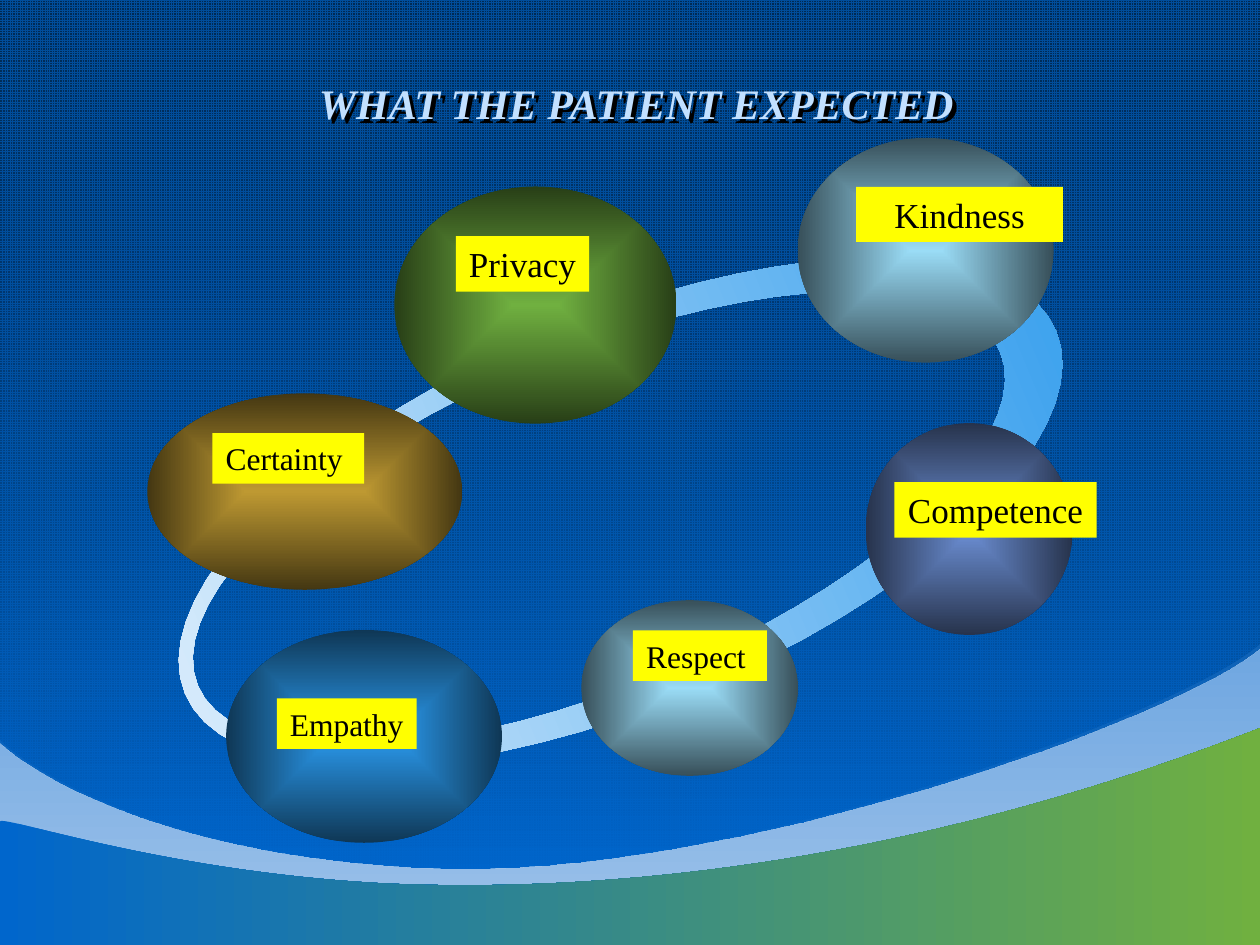
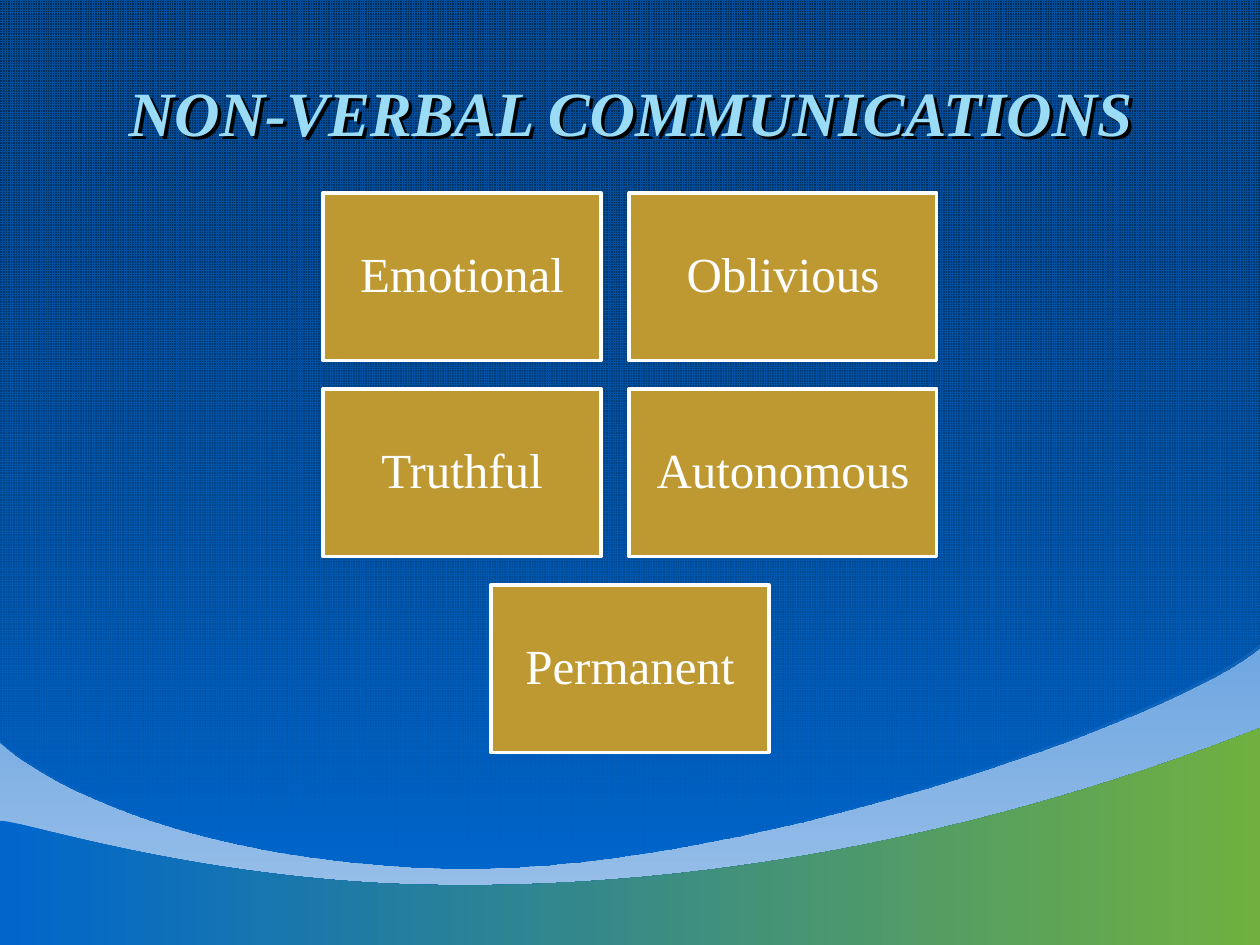
import math

import pptx
import pptx.util
import pptx.dml.color
import pptx.enum.dml
import pptx.enum.shapes
import pptx.enum.text
import pptx.oxml
import pptx.oxml.ns

Cm = pptx.util.Cm
Pt = pptx.util.Pt
SHAPE = pptx.enum.shapes.MSO_SHAPE
ANCHOR = pptx.enum.text.MSO_ANCHOR
qn = pptx.oxml.ns.qn
NAMESPACE = pptx.oxml.ns.nsdecls("a")

WIDTH, HEIGHT = 25.4, 19.05
FONT = "Times New Roman"
COLOURS = {
    "blue": "0066CC", "navy": "002549", "deep": "003162", "mist": "9FC3EA",
    "green": "70B040", "gold": "BE9932", "azure": "2A99EC", "sky": "9ADCF6",
    "violet": "6B8ED3", "ice": "EAF4FD", "pale": "C2E0FF",
    "yellow": "FFFF00", "white": "FFFFFF", "black": "000000",
}

EXPECTED_TITLE = {"text": "WHAT THE PATIENT EXPECTED", "area": (1.4, 1.19, 22.86, 2.41),
                  "size": 24, "colour": "pale", "shadow": 0.12, "lift": 0.66}
NON_VERBAL_TITLE = {"text": "NON-VERBAL COMMUNICATIONS", "area": (1.3, 0.76, 22.83, 2.97),
                    "size": 36, "colour": "sky", "shadow": 0.1, "lift": 0}

EXPECTATIONS = [
    ("Privacy", 20, "green", (7.95, 3.76, 5.69, 4.78), (9.19, 4.76, 2.69, 1.12)),
    ("Certainty ", 18, "gold", (2.97, 7.93, 6.35, 3.96), (4.28, 8.73, 3.06, 1.02)),
    ("Empathy", 18, "azure", (4.56, 12.7, 5.56, 4.29), (5.58, 14.08, 2.82, 1.02)),
    ("Respect ", 18, "sky", (11.72, 12.1, 4.37, 3.54), (12.76, 12.71, 2.7, 1.02)),
    ("Competence", 20, "violet", (17.45, 8.53, 4.18, 4.27), (18.03, 9.72, 4.08, 1.12)),
    ("Kindness", 20, "sky", (16.08, 2.78, 5.16, 4.53), (17.26, 3.77, 4.17, 1.11)),
]
RIM_SHADE = 0.36
RING = {"outer": (12.51, 10.33, 9.51, 3.9), "inner": (12.06, 10.28, 8.76, 3.37), "turn": -22.6}

TRAIT_ROWS = [
    [("Emotional", 5.6), ("Oblivious", 6.2)],
    [("Truthful", 5.6), ("Autonomous", 6.2)],
    [("Permanent", 5.6)],
]
TRAIT_TOP, TRAIT_HEIGHT, TRAIT_GAP = 3.89, 3.38, 0.57

MESH_EDGE = [(0, 14.91), (0.25, 15.21), (2.79, 17.22), (8.69, 17.48),
             (14.6, 17.73), (23.8, 14.4), (WIDTH, 12.98)]
SKY_EDGE = [(0, 14.96), (0.3, 15.27), (2.82, 17.25), (8.74, 17.5),
            (14.63, 17.75), (23.83, 14.45), (WIDTH, 13.05)]
WAVE_EDGE = [(0, 16.56), (0.08, 16.43), (3.3, 17.58), (7.77, 17.81),
             (12.24, 18.01), (18.36, 17.42), (WIDTH, 14.68)]


def rgb(name):
    return pptx.dml.color.RGBColor.from_string(COLOURS[name])


def shaded(name, factor):
    return pptx.dml.color.RGBColor(*(round(part * factor) for part in rgb(name)))


def lengths(area):
    return [Cm(value) for value in area]


def fill_gradient(fill, first, last, angle=0):
    fill.gradient()
    for stop, colour in zip(fill.gradient_stops, (first, last)):
        stop.color.rgb = colour
    fill.gradient_angle = angle


def gradient_element(shape):
    return shape._element.spPr.find(qn("a:gradFill"))


def set_transparent_start(shape, percent):
    colour = next(gradient_element(shape).iter(qn("a:srgbClr")))
    colour.append(pptx.oxml.parse_xml(f'<a:alpha {NAMESPACE} val="{percent * 1000}"/>'))


def make_radial(shape):
    gradient = gradient_element(shape)
    gradient.remove(gradient.find(qn("a:lin")))
    gradient.append(pptx.oxml.parse_xml(
        f'<a:path {NAMESPACE} path="shape">'
        '<a:fillToRect l="50000" t="50000" r="50000" b="50000"/></a:path>'))


def ellipse_points(centre_x, centre_y, radius_x, radius_y, direction, steps=72):
    angles = [direction * 2 * math.pi * step / steps for step in range(steps)]
    return [(centre_x + radius_x * math.cos(a), centre_y + radius_y * math.sin(a))
            for a in angles]


def add_outline(page, *contours):
    contours = [[(Cm(x), Cm(y)) for x, y in contour] for contour in contours]
    builder = page.shapes.build_freeform(*contours[0][0])
    for index, contour in enumerate(contours):
        if index:
            builder.move_to(*contour[0])
        builder.add_line_segments(contour[1:], close=True)
    shape = builder.convert_to_shape()
    shape.shadow.inherit = False
    shape.line.fill.background()
    return shape


def add_wave(page, edge, base):
    shape = add_outline(page, edge + [(WIDTH, base), (0, base)])
    segments = list(shape._element.spPr.iter(qn("a:lnTo")))[:len(edge) - 1]
    for start in range(0, len(segments), 3):
        curve = pptx.oxml.parse_xml(f'<a:cubicBezTo {NAMESPACE}/>')
        segments[start].addprevious(curve)
        for segment in segments[start:start + 3]:
            curve.append(segment[0])
            segment.getparent().remove(segment)
    return shape


def add_preset(page, preset, area):
    shape = page.shapes.add_shape(preset, *lengths(area))
    shape.shadow.inherit = False
    shape.line.fill.background()
    return shape


def write(shape, text, size, colour, strong=False):
    frame = shape.text_frame
    frame.vertical_anchor = ANCHOR.MIDDLE
    para = frame.paragraphs[0]
    para.alignment = pptx.enum.text.PP_ALIGN.CENTER
    span = para.add_run()
    span.text = text
    span.font.name = FONT
    span.font.size = Pt(size)
    span.font.color.rgb = rgb(colour)
    span.font.bold = span.font.italic = strong
    return para


def add_backdrop(layout, page):
    fill_gradient(layout.background.fill, rgb("blue"), rgb("mist"), 270)

    mesh = add_wave(page, MESH_EDGE, 0)
    mesh.fill.patterned()
    mesh.fill.pattern = pptx.enum.dml.MSO_PATTERN.SMALL_GRID
    mesh.fill.fore_color.rgb = rgb("blue")
    mesh.fill.back_color.rgb = rgb("navy")

    sky = add_wave(page, SKY_EDGE, 0)
    fill_gradient(sky.fill, rgb("deep"), rgb("blue"), 270)
    set_transparent_start(sky, 46)

    wave = add_wave(page, WAVE_EDGE, HEIGHT)
    fill_gradient(wave.fill, rgb("blue"), rgb("green"))

    for shape in (mesh, sky, wave):
        layout.shapes._spTree.append(shape._element)


def add_title(page, title):
    box = page.shapes.add_textbox(*lengths(title["area"]))
    box.text_frame.word_wrap = True
    box.text_frame.margin_bottom = Cm(0.13 + title["lift"])
    write(box, title["text"], title["size"], title["colour"], strong=True)
    box._element.spPr.append(pptx.oxml.parse_xml(
        f'<a:effectLst {NAMESPACE}>'
        f'<a:outerShdw dist="{Cm(title["shadow"])}" dir="2700000" algn="ctr" rotWithShape="0">'
        f'<a:srgbClr val="{COLOURS["black"]}"/></a:outerShdw></a:effectLst>'))


def add_expectations(page):
    ring = add_outline(page, ellipse_points(*RING["outer"], -1),
                       ellipse_points(*RING["inner"], 1))
    fill_gradient(ring.fill, rgb("ice"), rgb("azure"))
    ring.rotation = RING["turn"]

    for text, size, colour, oval_area, label_area in EXPECTATIONS:
        oval = add_preset(page, SHAPE.OVAL, oval_area)
        fill_gradient(oval.fill, rgb(colour), shaded(colour, RIM_SHADE))
        make_radial(oval)
        label = add_preset(page, SHAPE.RECTANGLE, label_area)
        label.fill.solid()
        label.fill.fore_color.rgb = rgb("yellow")
        label.text_frame.word_wrap = False
        write(label, text, size, "black")


def add_traits(page):
    for index, row in enumerate(TRAIT_ROWS):
        row_width = sum(width for _, width in row) + TRAIT_GAP * (len(row) - 1)
        left = (WIDTH - row_width) / 2
        top = TRAIT_TOP + index * (TRAIT_HEIGHT + TRAIT_GAP)
        for text, width in row:
            tile = add_preset(page, SHAPE.RECTANGLE, (left, top, width, TRAIT_HEIGHT))
            tile.fill.solid()
            tile.fill.fore_color.rgb = rgb("gold")
            tile.line.color.rgb = rgb("white")
            tile.line.width = Pt(2)
            frame = tile.text_frame
            frame.margin_left = frame.margin_right = Cm(0.3)
            frame.margin_top = frame.margin_bottom = Cm(0.3)
            write(tile, text, 28, "white").line_spacing = 0.9
            left += width + TRAIT_GAP


def main():
    deck = pptx.Presentation()
    deck.slide_width, deck.slide_height = Cm(WIDTH), Cm(HEIGHT)
    layout = deck.slide_layouts[6]
    expected_page = deck.slides.add_slide(layout)
    non_verbal_page = deck.slides.add_slide(layout)
    add_backdrop(layout, expected_page)
    add_title(expected_page, EXPECTED_TITLE)
    add_expectations(expected_page)
    add_title(non_verbal_page, NON_VERBAL_TITLE)
    add_traits(non_verbal_page)
    deck.save("out.pptx")


if __name__ == "__main__":
    main()
